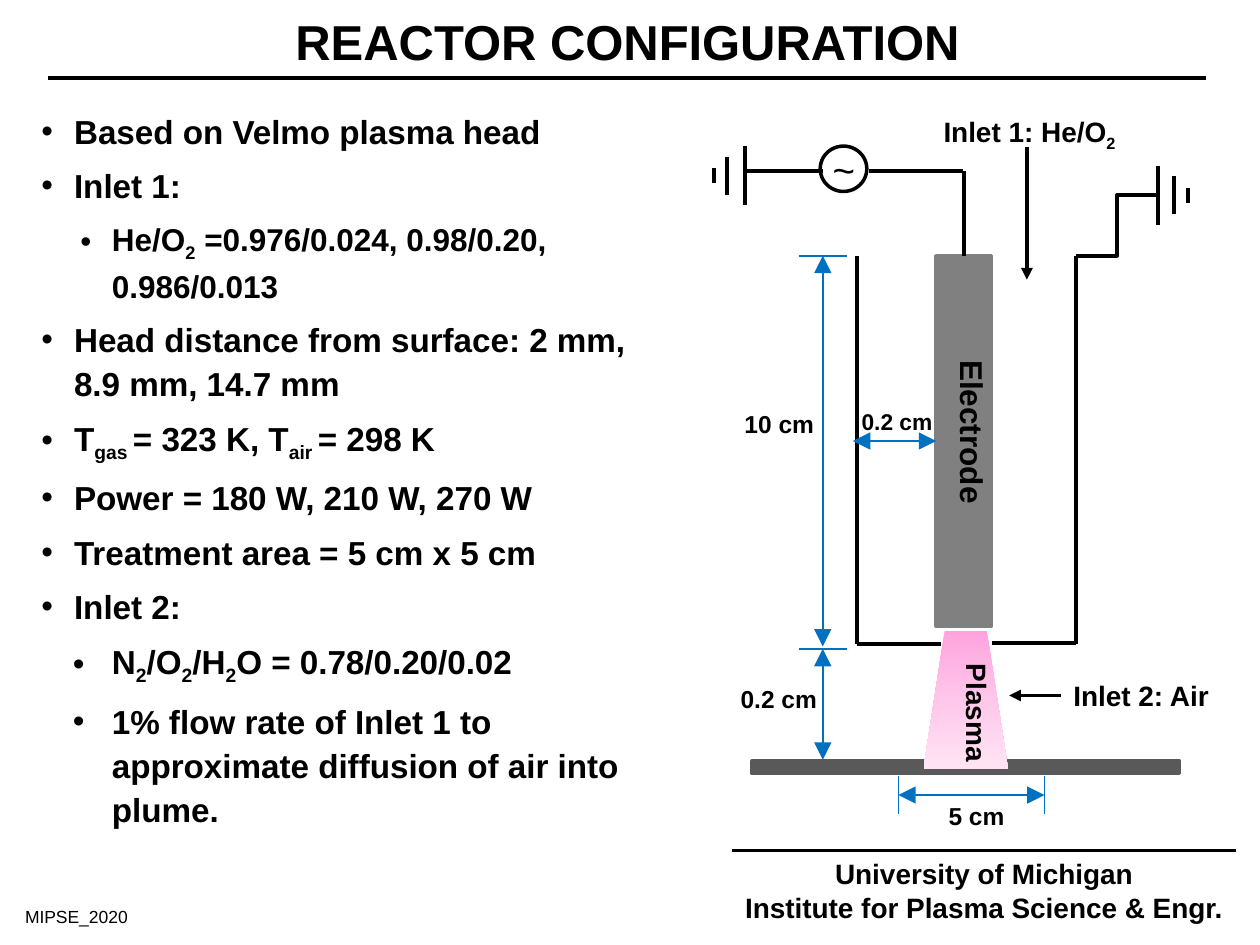
from copy import deepcopy

from lxml.etree import SubElement
from pptx import Presentation
from pptx.dml.color import RGBColor
from pptx.enum.shapes import MSO_CONNECTOR as Link, MSO_SHAPE as Preset
from pptx.enum.text import MSO_AUTO_SIZE as Fit, PP_ALIGN as Align
from pptx.oxml.ns import qn
from pptx.util import Inches, Pt

COLUMNS, ROWS = 1000, 750
WIDTH, HEIGHT = Inches(10), Inches(7.5)
BLACK, BLUE, GRAY, DARK_GRAY = "000000", "0070C0", "808080", "595959"
PLASMA = ["FFA3DF", "FFC7EA", "FFE4F4"]
BOTH_ENDS = ("headEnd", "tailEnd")

BULLETS = [
    ("Based on Velmo plasma head", 19, 26, -26, 0),
    ("Inlet 1:", 19, 26, -26, 0),
    ("He/O|2| =0.976/0.024, 0.98/0.20, 0.986/0.013", 18, 56, -25, 1),
    ("Head distance from surface: 2 mm, 8.9 mm, 14.7 mm", 19, 26, -26, 0),
    ("T|gas |= 323 K, T|air |= 298 K", 19, 26, -26, 0),
    ("Power = 180 W, 210 W, 270 W", 19, 26, -26, 0),
    ("Treatment area = 5 cm x 5 cm", 19, 26, -26, 0),
    ("Inlet 2:", 19, 26, -26, 0),
    ("N|2|/O|2|/H|2|O = 0.78/0.20/0.02", 19, 56, -31, 0),
    ("1% flow rate of Inlet 1 to approximate diffusion of air into plume.", 19, 56, -31, 0),
]

RULES = [(581, 675, 981, 675), (38, 62, 957, 62)]
REACTOR_WALLS = [
    (680, 203, 680, 511), (854, 203, 854, 511),
    (680, 511, 747, 511), (787, 510, 854, 510),
]
WIRES = [(765, 203, 765, 136), (764, 136, 690, 136), (653, 136, 591, 136)]
GROUNDS = [(139.5, ((591, 47), (577, 30), (567, 12))),
           (155, ((919, 47), (932, 30), (943, 12)))]
INLET_ARROWS = [(815, 117, 815, 222), (842, 552, 801, 552)]
DIMENSIONS = [
    (653, 203, 653, 513), (653, 515, 653, 603),
    (829, 631, 713, 631), (743, 350, 677, 350),
]
TICKS = [(634, row, 672, row) for row in (203, 515)]
TICKS += [(column, 616, column, 646) for column in (829, 713)]

LABELS = [
    ("5 cm", (743, 631, 67, 34), 14),
    ("0.2 cm", (578, 538, 93, 34), 14),
    ("10 cm", (581, 320, 79, 34), 14),
    ("0.2 cm", (674, 319, 80, 32), 13),
    ("Inlet 1: He/O|2", (739, 86, 197, 37), 16),
    ("Inlet 2: Air", (842, 534, 154, 37), 16),
]
UPRIGHT_LABELS = [
    ("Electrode", (742, 276, 50, 192), 18),
    ("Plasma", (747, 517, 47, 101), 16),
]


def color(hex_code):
    """Turn a hex string into a colour."""
    return RGBColor.from_string(hex_code)


def place(*cells):
    """Turn alternating columns and rows of the grid into lengths."""
    steps = (WIDTH / COLUMNS, HEIGHT / ROWS)
    return [round(cell * steps[index % 2]) for index, cell in enumerate(cells)]


def apply(target, formats):
    """Set each format value on the target."""
    for name, value in formats.items():
        setattr(target, name, value)


def write(para, text, size, bold=True):
    """Fill a paragraph, lowering every second part between bars."""
    for index, part in enumerate(text.split("|")):
        span = para.add_run()
        span.text = part
        apply(span.font, {"name": "Arial", "size": Pt(size), "bold": bold})
        span.font.color.rgb = color(BLACK)
        if index % 2:
            span.font._element.set("baseline", "-25000")


def add_frame(page, cells, wrap=True):
    """Add an empty text box and return its text frame."""
    frame = page.shapes.add_textbox(*place(*cells)).text_frame
    apply(frame, {"word_wrap": wrap, "auto_size": Fit.SHAPE_TO_FIT_TEXT})
    return frame


def add_label(page, text, cells, size, bold=True, align=Align.LEFT, wrap=True):
    """Add a label with one paragraph for each line of text."""
    frame = add_frame(page, cells, wrap)
    for index, line in enumerate(text.split("\n")):
        para = frame.add_paragraph() if index else frame.paragraphs[0]
        para.alignment = align
        write(para, line, size, bold)
    return frame


def add_bullets(page, cells):
    """Add the bulleted list of operating conditions."""
    frame = add_frame(page, cells)
    for index, (text, size, margin, indent, level) in enumerate(BULLETS):
        para = frame.add_paragraph() if index else frame.paragraphs[0]
        apply(para, {"level": level, "line_spacing": 1.1, "space_after": Pt(6)})
        write(para, text, size)
        props = para._p.get_or_add_pPr()
        props.set("marL", str(place(margin)[0]))
        props.set("indent", str(place(indent)[0]))
        SubElement(props, qn("a:buFont"), typeface="Arial")
        SubElement(props, qn("a:buChar"), char="•")


def add_line(page, cells, hue=BLACK, width=2.25, kind=Link.STRAIGHT, ends=(), head="med"):
    """Add a line with optional arrowheads."""
    line = page.shapes.add_connector(kind, *place(*cells))
    line.line.color.rgb = color(hue)
    line.line.width = Pt(width)
    for end in ends:
        SubElement(line.line._get_or_add_ln(), qn(f"a:{end}"), type="triangle", w=head, len=head)
    SubElement(line._element.spPr, qn("a:effectLst"))


def add_preset(page, preset, cells, fill=None, outline=None):
    """Add a preset shape with a plain fill and outline."""
    shape = page.shapes.add_shape(preset, *place(*cells))
    shape.shadow.inherit = False
    if fill:
        shape.fill.solid()
        shape.fill.fore_color.rgb = color(fill)
    else:
        shape.fill.background()
    if outline:
        shape.line.color.rgb = color(outline)
        shape.line.width = Pt(2)
    else:
        shape.line.fill.background()
    return shape


def add_plume(page, cells):
    """Add the plasma plume, fading from top to bottom."""
    plume = add_preset(page, Preset.TRAPEZOID, cells)
    plume.fill.gradient()
    plume.fill.gradient_angle = 270
    stops = plume._element.spPr.find(".//" + qn("a:gsLst"))
    stops.insert(1, deepcopy(stops[0]))
    for index, (stop, hue) in enumerate(zip(plume.fill.gradient_stops, PLASMA)):
        stop.position = index / 2
        stop.color.rgb = color(hue)


def add_reactor(page):
    """Draw the electrode, walls, circuit, plume and surface."""
    add_preset(page, Preset.RECTANGLE, (743, 203, 44, 294), GRAY, GRAY)
    add_preset(page, Preset.OVAL, (651, 116, 37, 36), outline=BLACK)
    add_preset(page, Preset.RECTANGLE, (597, 604, 339, 10), DARK_GRAY, DARK_GRAY)
    add_plume(page, (733, 501, 67, 109))
    for cells in REACTOR_WALLS + WIRES:
        add_line(page, cells)
    add_line(page, (854, 203, 919, 155), kind=Link.ELBOW)
    for middle, bars in GROUNDS:
        for column, length in bars:
            add_line(page, (column, middle - length / 2, column, middle + length / 2))


def add_annotations(page):
    """Draw the inlet arrows, dimensions and labels."""
    for cells in INLET_ARROWS:
        add_line(page, cells, ends=("tailEnd",))
    for cells in TICKS:
        add_line(page, cells, BLUE, 1)
    for cells in DIMENSIONS:
        add_line(page, cells, BLUE, 1, ends=BOTH_ENDS, head="lg")
    for label in LABELS:
        add_label(page, *label)
    for label in UPRIGHT_LABELS:
        add_label(page, *label)._txBody.bodyPr.set("vert", "vert")
    add_label(page, "~", (651, 111, 43, 47), 22, bold=False)


def main():
    """Build the slide and save the deck."""
    deck = Presentation()
    apply(deck, {"slide_width": WIDTH, "slide_height": HEIGHT})
    page = deck.slides.add_slide(deck.slide_layouts[6])
    for cells in RULES:
        add_line(page, cells)
    add_label(page, "REACTOR CONFIGURATION", (21, 4, 954, 57), 28, align=Align.CENTER)
    add_label(page, "University of Michigan\nInstitute for Plasma Science & Engr.",
              (575, 675, 412, 64), 16, align=Align.CENTER)
    add_bullets(page, (23, 80, 513, 659))
    add_reactor(page)
    add_annotations(page)
    add_label(page, "MIPSE_2020", (10, 714, 102, 27), 10, bold=False, wrap=False)
    deck.save("out.pptx")


if __name__ == "__main__":
    main()
